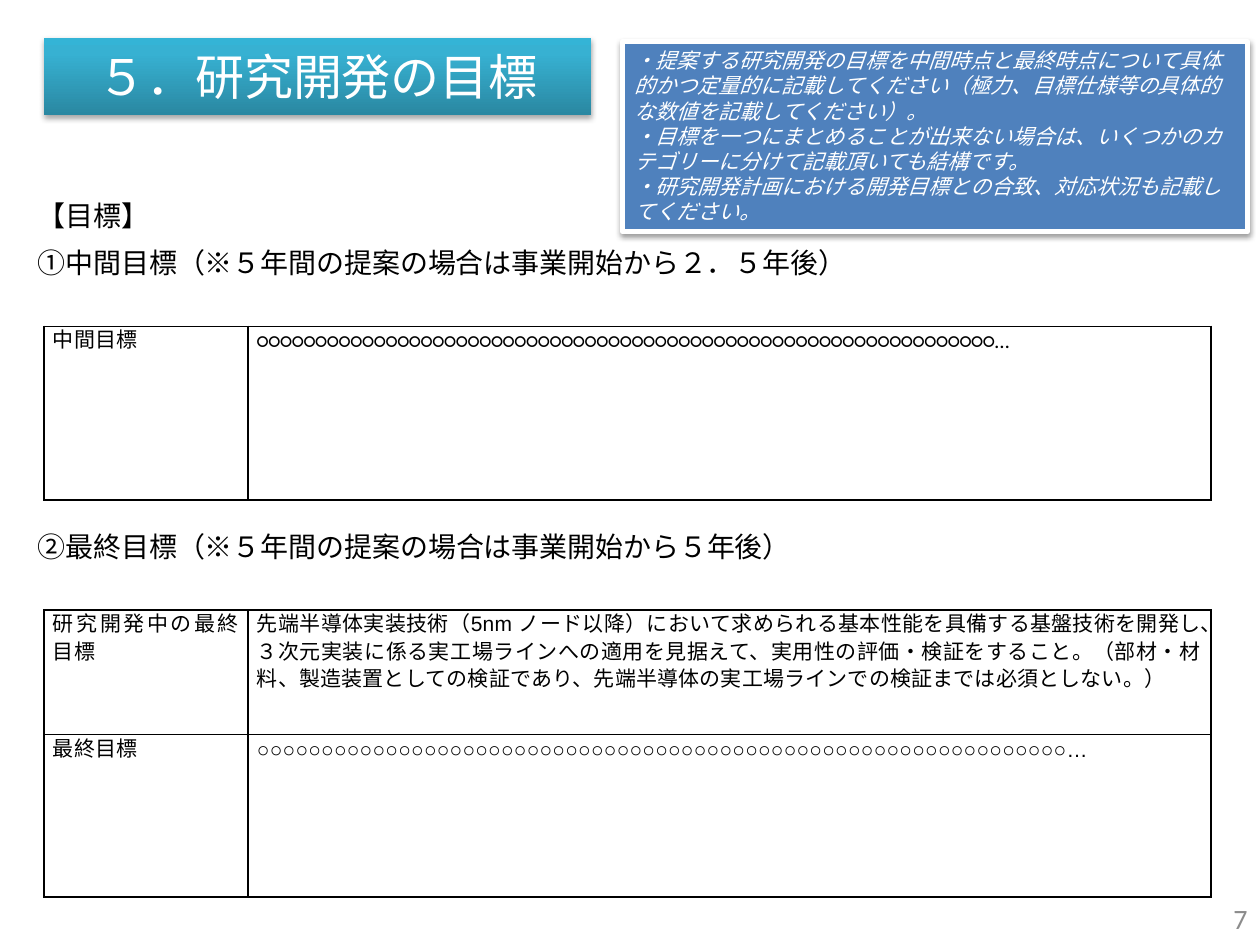
from lxml.etree import SubElement
from pptx import Presentation
from pptx.dml.color import RGBColor
from pptx.enum.shapes import MSO_SHAPE
from pptx.enum.text import MSO_ANCHOR, PP_ALIGN
from pptx.oxml import parse_xml
from pptx.oxml.ns import nsdecls, qn
from pptx.util import Inches, Pt

BLACK = RGBColor(0x00, 0x00, 0x00)
WHITE = RGBColor(0xFF, 0xFF, 0xFF)
GRAY = RGBColor(0x8C, 0x8C, 0x8C)
NOTE_BLUE = RGBColor(0x4F, 0x81, 0xBD)
TEAL_DARK = RGBColor(0x2A, 0x88, 0xA2)
TEAL = RGBColor(0x37, 0xB1, 0xD2)
TEAL_LIGHT = RGBColor(0x34, 0xB4, 0xD6)

SLIDE_W, SLIDE_H = 10, 7.5
HEADING_X, TABLE_X = 0.2, 0.35
COLUMNS = (1.62, 7.64)

UNFILLED = "○" * 63 + "…"
GUIDANCE = (
    "・提案する研究開発の目標を中間時点と最終時点について具体的かつ定量的に記載してください（極力、目標仕様等の具体的な数値を記載してください）。",
    "・目標を一つにまとめることが出来ない場合は、いくつかのカテゴリーに分けて記載頂いても結構です。",
    "・研究開発計画における開発目標との合致、対応状況も記載してください。",
)
HEADINGS = (
    (1.53, 2.91, "【目標】"),
    (1.9, 9.53, "①中間目標（※５年間の提案の場合は事業開始から２．５年後）"),
    (4.15, 9.42, "②最終目標（※５年間の提案の場合は事業開始から５年後）"),
)
MIDTERM_GOALS = (("中間目標", UNFILLED),)
FINAL_GOALS = (
    ("研究開発中の最終目標",
     "先端半導体実装技術（5nm ノード以降）において求められる基本性能を具備する基盤技術を開発し、"
     "３次元実装に係る実工場ラインへの適用を見据えて、実用性の評価・検証をすること。"
     "（部材・材料、製造装置としての検証であり、先端半導体の実工場ラインでの検証までは必須としない。）"),
    ("最終目標", UNFILLED),
)


def inches(box):
    return [Inches(length) for length in box]


def style_font(font, size, color, name="Arial"):
    font.size, font.name = Pt(size), name
    font.color.rgb = color


def add_run(paragraph, text, size, color, name="Arial"):
    run = paragraph.add_run()
    run.text = text
    style_font(run.font, size, color, name)
    return run


def add_shadow(shape, opacity, blur, distance):
    """Cast a soft black shadow straight down."""
    shape.shadow.inherit = False
    effects = shape._element.spPr.find(qn("a:effectLst"))
    shadow = SubElement(effects, qn("a:outerShdw"), blurRad=str(Pt(blur)),
                        dist=str(Pt(distance)), dir="5400000", rotWithShape="0")
    black = SubElement(shadow, qn("a:srgbClr"), val=str(BLACK))
    SubElement(black, qn("a:alpha"), val=str(opacity * 1000))


def fill_title(slide, box):
    title = slide.shapes.title
    title.left, title.top, title.width, title.height = inches(box)
    stops = "".join(
        f'<a:gs pos="{share * 1000}"><a:srgbClr val="{color}"/></a:gs>'
        for share, color in ((0, TEAL_DARK), (80, TEAL), (100, TEAL_LIGHT)))
    title._element.spPr.append(parse_xml(
        f'<a:gradFill {nsdecls("a")} rotWithShape="1"><a:gsLst>{stops}</a:gsLst>'
        '<a:lin ang="16200000" scaled="0"/></a:gradFill>'))
    add_shadow(title, 35, 3.1, 1.8)
    frame = title.text_frame
    frame.vertical_anchor = MSO_ANCHOR.MIDDLE
    heading = frame.paragraphs[0]
    heading.alignment = PP_ALIGN.CENTER
    add_run(heading, "５．研究開発の目標", 28, WHITE)


def add_guidance(slide, box):
    note = slide.shapes.add_shape(MSO_SHAPE.RECTANGLE, *inches(box))
    note.fill.solid()
    note.fill.fore_color.rgb = NOTE_BLUE
    note.line.color.rgb = WHITE
    note.line.width = Pt(3)
    add_shadow(note, 38, 3.1, 1.6)
    frame = note.text_frame
    frame.word_wrap = True
    frame.vertical_anchor = MSO_ANCHOR.TOP
    for index, text in enumerate(GUIDANCE):
        item = frame.add_paragraph() if index else frame.paragraphs[0]
        item.alignment = PP_ALIGN.LEFT
        add_run(item, text, 12, WHITE).font.italic = True


def add_heading(slide, box, text):
    frame = slide.shapes.add_textbox(*inches(box)).text_frame
    frame.word_wrap = True
    add_run(frame.paragraphs[0], text, 16, BLACK)


def format_cell(cell, text, font_name):
    cell.margin_left = cell.margin_right = Inches(0.07)
    cell.margin_top = cell.margin_bottom = 0
    properties = cell._tc.get_or_add_tcPr()
    for side in ("lnL", "lnR", "lnT", "lnB"):
        border = SubElement(properties, qn(f"a:{side}"), w=str(Pt(1)))
        solid = SubElement(border, qn("a:solidFill"))
        SubElement(solid, qn("a:srgbClr"), val=str(BLACK))
    cell.fill.background()
    paragraph = cell.text_frame.paragraphs[0]
    paragraph.alignment = PP_ALIGN.JUSTIFY
    paragraph.line_spacing = Pt(15.8)
    run = add_run(paragraph, text, 12, BLACK, font_name)
    run.font._element.set("spc", "10")


def add_goal_table(slide, top, row_heights, goals, font_name):
    box = (TABLE_X, top, sum(COLUMNS), sum(row_heights))
    table = slide.shapes.add_table(len(goals), len(COLUMNS), *inches(box)).table
    table.first_row = table.horz_banding = False
    for column, width in zip(table.columns, COLUMNS):
        column.width = Inches(width)
    for row, height, texts in zip(table.rows, row_heights, goals):
        row.height = Inches(height)
        for cell, text in zip(row.cells, texts):
            format_cell(cell, text, font_name)


def add_page_number(slide, width, height):
    box = (SLIDE_W - width, 7.09, width, height)
    frame = slide.shapes.add_textbox(*inches(box)).text_frame
    frame.word_wrap = True
    frame.vertical_anchor = MSO_ANCHOR.MIDDLE
    frame.paragraphs[0].alignment = PP_ALIGN.RIGHT
    add_run(frame.paragraphs[0], "7", 16, GRAY, "Calibri")


def main():
    deck = Presentation()
    deck.slide_width, deck.slide_height = Inches(SLIDE_W), Inches(SLIDE_H)
    slide = deck.slides.add_slide(deck.slide_layouts.get_by_name("Title Only"))
    fill_title(slide, (TABLE_X, 0.3, 4.34, 0.61))
    add_guidance(slide, (4.94, 0.33, 4.96, 1.51))
    for top, width, text in HEADINGS:
        add_heading(slide, (HEADING_X, top, width, 0.37), text)
    add_goal_table(slide, 2.59, (1.38,), MIDTERM_GOALS, "Calibri")
    add_goal_table(slide, 4.84, (0.99, 1.29), FINAL_GOALS, "Arial")
    add_page_number(slide, 2.33, 0.4)
    deck.save("out.pptx")


if __name__ == "__main__":
    main()
